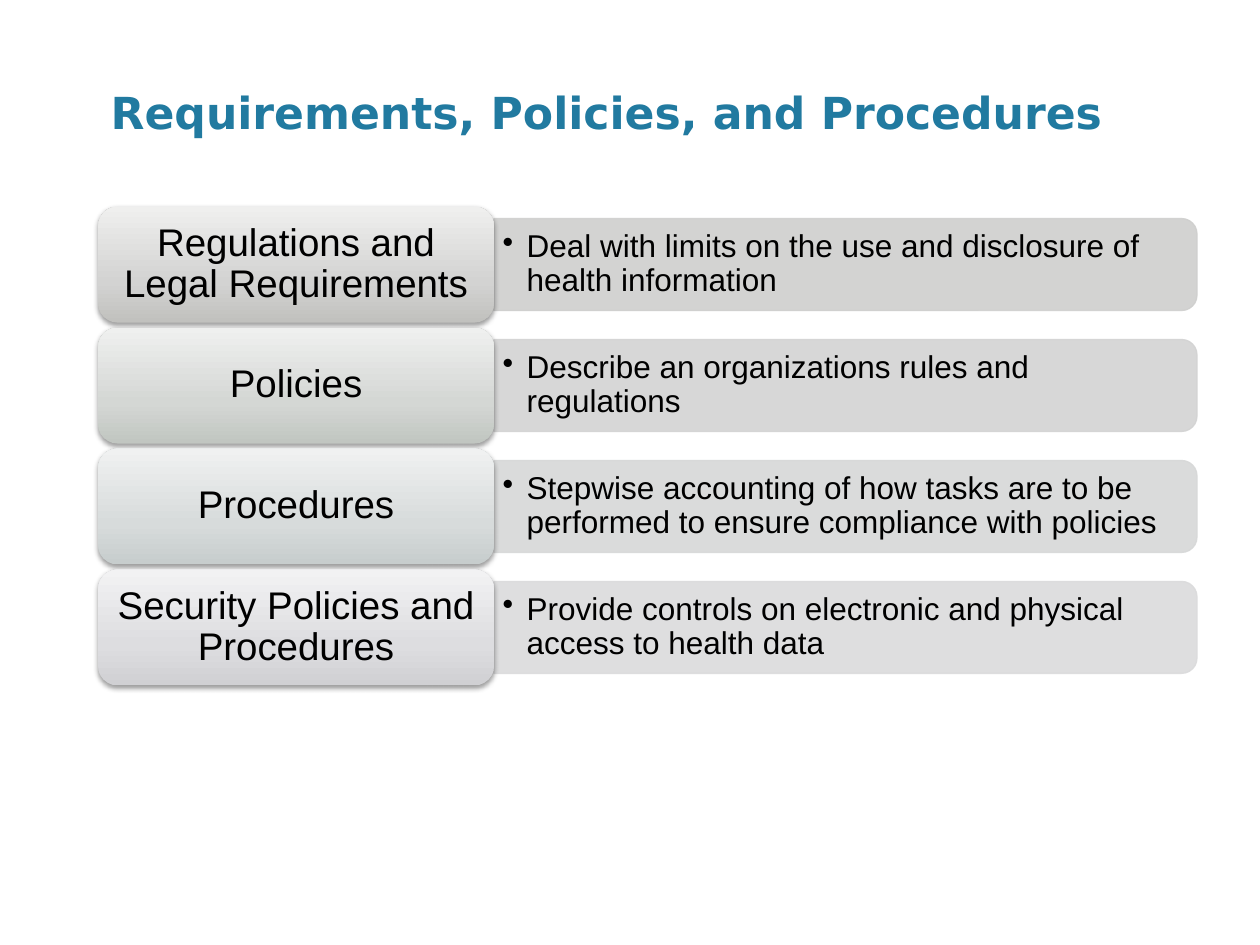
from pptx import Presentation
from pptx.dml.color import RGBColor
from pptx.enum.shapes import MSO_SHAPE
from pptx.enum.text import MSO_ANCHOR, PP_ALIGN
from pptx.oxml import parse_xml
from pptx.oxml.ns import nsdecls, qn
from pptx.util import Inches, Pt

ROUNDED = MSO_SHAPE.ROUNDED_RECTANGLE
TOP_ROUNDED = MSO_SHAPE.ROUND_2_SAME_RECTANGLE
TOP, MIDDLE = MSO_ANCHOR.TOP, MSO_ANCHOR.MIDDLE
LEFT, CENTER = PP_ALIGN.LEFT, PP_ALIGN.CENTER

BLACK = RGBColor(0x00, 0x00, 0x00)
TITLE_BLUE = RGBColor(0x21, 0x7A, 0xA0)
BAR_GRAYS = [
    RGBColor(0xCF, 0xCF, 0xCE),
    RGBColor(0xD3, 0xD3, 0xD3),
    RGBColor(0xD7, 0xD8, 0xD8),
    RGBColor(0xDB, 0xDB, 0xDC),
]
LABEL_GRADIENTS = [
    (RGBColor(0xC1, 0xC1, 0xBE), RGBColor(0xD3, 0xD3, 0xD2), RGBColor(0xEF, 0xEF, 0xEE)),
    (RGBColor(0xC1, 0xC6, 0xC1), RGBColor(0xD4, 0xD7, 0xD4), RGBColor(0xEF, 0xF0, 0xEF)),
    (RGBColor(0xC7, 0xCD, 0xCD), RGBColor(0xD7, 0xDB, 0xDB), RGBColor(0xF0, 0xF1, 0xF1)),
    (RGBColor(0xD0, 0xD0, 0xD3), RGBColor(0xDD, 0xDD, 0xE0), RGBColor(0xF2, 0xF2, 0xF3)),
]
GRADIENT_STOPS = (0, 35, 100)

ROWS = [
    ("Regulations and Legal Requirements",
     "Deal with limits on the use and disclosure of health information"),
    ("Policies", "Describe an organizations rules and regulations"),
    ("Procedures",
     "Stepwise accounting of how tasks are to be performed to ensure compliance with policies"),
    ("Security Policies and Procedures",
     "Provide controls on electronic and physical access to health data"),
]
ROW_TOP, ROW_PITCH = 1.64, 0.96
LABEL_LEFT, LABEL_WIDTH, LABEL_HEIGHT = 0.78, 3.14, 0.92
BAR_LEFT, BAR_WIDTH, BAR_HEIGHT = LABEL_LEFT + LABEL_WIDTH, 5.58, 0.73
BULLET_WIDTH, BULLET_HEIGHT = 5.54, 0.66


def write_text(shape, text, size, font="Arial", color=BLACK, bold=False, align=LEFT,
               anchor=MIDDLE, insets=(0.1, 0.05), spacing=None, bullet_indent=None):
    """Fill a shape with one formatted paragraph."""
    frame = shape.text_frame
    frame.word_wrap = True
    frame.vertical_anchor = anchor
    frame.margin_left = frame.margin_right = Inches(insets[0])
    frame.margin_top = frame.margin_bottom = Inches(insets[1])
    paragraph = frame.paragraphs[0]
    paragraph.text = text
    paragraph.alignment = align
    if spacing:
        paragraph.line_spacing = spacing
    if bullet_indent:
        properties = paragraph._p.get_or_add_pPr()
        properties.set("marL", str(Inches(bullet_indent)))
        properties.set("indent", str(-Inches(bullet_indent)))
        properties.append(parse_xml(f'<a:buChar {nsdecls("a")} char="•"/>'))
    paragraph.font.name = font
    paragraph.font.size = Pt(size)
    paragraph.font.bold = bold
    paragraph.font.color.rgb = color


def add_text(slide, left, top, width, height, text, **text_format):
    """Add a text box."""
    box = slide.shapes.add_textbox(Inches(left), Inches(top), Inches(width), Inches(height))
    write_text(box, text, **text_format)


def add_bar(slide, middle, color):
    """Add a translucent bar with rounded right corners, centred on a height."""
    center = BAR_LEFT + BAR_WIDTH / 2
    bar = slide.shapes.add_shape(
        TOP_ROUNDED, Inches(center - BAR_HEIGHT / 2), Inches(middle - BAR_WIDTH / 2),
        Inches(BAR_HEIGHT), Inches(BAR_WIDTH))
    bar.rotation = 90
    bar.shadow.inherit = False
    bar.fill.solid()
    bar.fill.fore_color.rgb = color
    bar.line.color.rgb = color
    bar.line.width = Pt(0.75)
    for color_element in bar._element.spPr.iter(qn("a:srgbClr")):
        color_element.append(parse_xml(f'<a:alpha {nsdecls("a")} val="90000"/>'))


def add_label(slide, top, text, colors):
    """Add a rounded label with an upward gradient and a soft shadow."""
    label = slide.shapes.add_shape(
        ROUNDED, Inches(LABEL_LEFT), Inches(top), Inches(LABEL_WIDTH), Inches(LABEL_HEIGHT))
    label.line.fill.background()
    label.shadow.inherit = False
    stops = "".join(
        f'<a:gs pos="{position * 1000}"><a:srgbClr val="{color}"/></a:gs>'
        for position, color in zip(GRADIENT_STOPS, colors))
    properties = label._element.spPr
    properties.find(qn("a:prstGeom")).addnext(parse_xml(
        f'<a:gradFill {nsdecls("a")} rotWithShape="1"><a:gsLst>{stops}</a:gsLst>'
        '<a:lin ang="16200000" scaled="0"/></a:gradFill>'))
    properties.find(qn("a:effectLst")).append(parse_xml(
        f'<a:outerShdw {nsdecls("a")} blurRad="{Pt(3.1)}" dist="{Pt(1.6)}" dir="5400000" '
        'rotWithShape="0"><a:srgbClr val="000000"><a:alpha val="38000"/></a:srgbClr>'
        '</a:outerShdw>'))
    write_text(label, text, size=22, align=CENTER, insets=(0.1, 0.05), spacing=0.9)


def main():
    """Build and save the slide."""
    presentation = Presentation()
    presentation.slide_width, presentation.slide_height = Inches(10), Inches(7.5)
    slide = presentation.slides.add_slide(presentation.slide_layouts[6])
    for index, (label, description) in enumerate(ROWS):
        top = ROW_TOP + index * ROW_PITCH
        middle = top + LABEL_HEIGHT / 2
        add_bar(slide, middle, BAR_GRAYS[index])
        add_text(slide, BAR_LEFT, middle - BULLET_HEIGHT / 2, BULLET_WIDTH, BULLET_HEIGHT,
                 description, size=18, insets=(0.07, 0.04), spacing=0.9, bullet_indent=0.19)
        add_label(slide, top, label, LABEL_GRADIENTS[index])
    add_text(slide, 0.78, 0.63, 8.72, 0.88, "Requirements, Policies, and Procedures",
             size=25.2, font="DejaVu Sans", color=TITLE_BLUE, bold=True, anchor=TOP)
    presentation.save("out.pptx")


if __name__ == "__main__":
    main()
